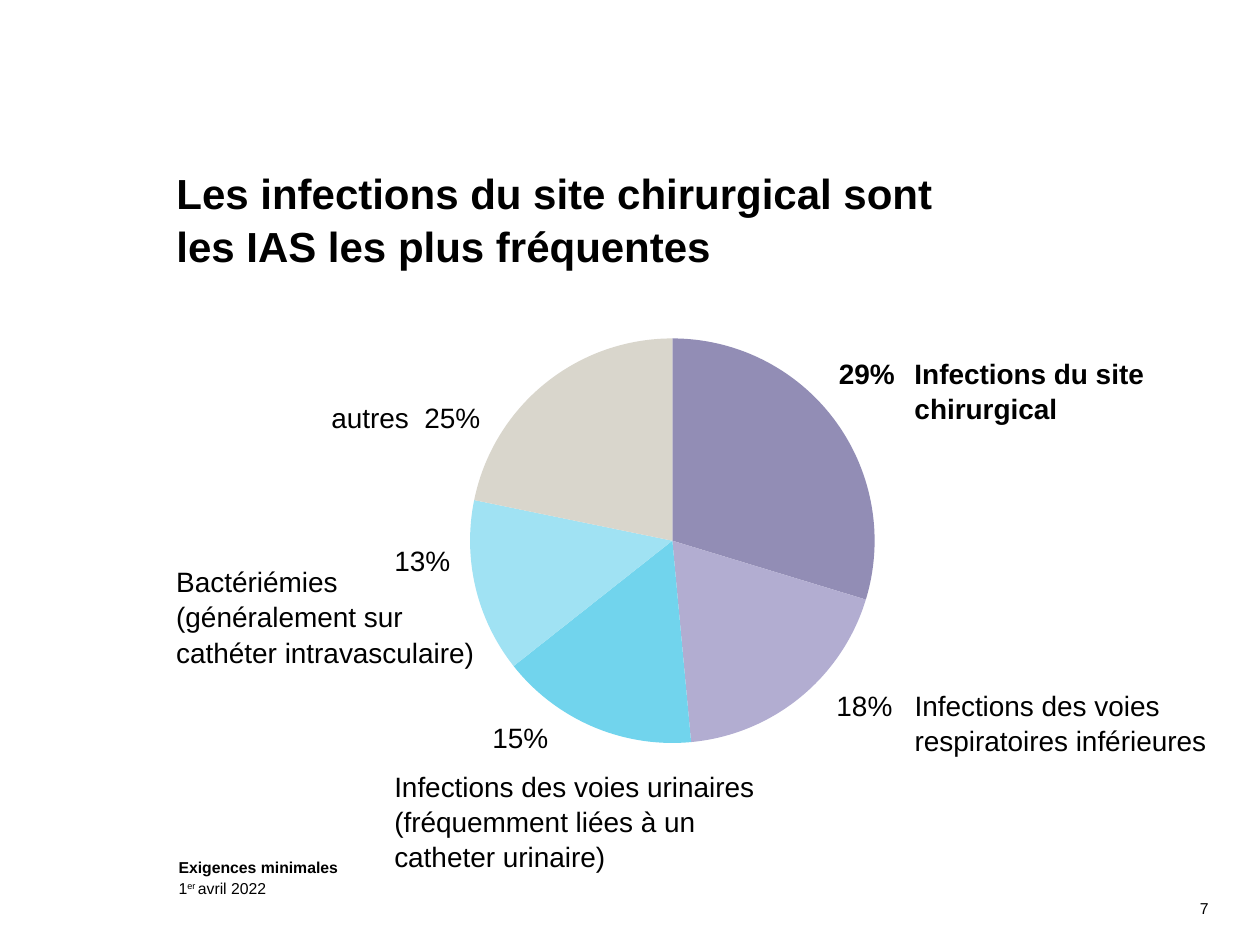
from lxml import etree
from pptx import Presentation
from pptx import util as u
from pptx.chart import data as chart_data
from pptx.dml import color
from pptx.enum import chart as chart_types, text
from pptx.oxml import ns

Pt = u.Pt
FONT = "Arial"
COLORS = {
    "text": "000000",
    "surgical": "58508E",
    "respiratory": "B2ADD1",
    "urinary": "71D4ED",
    "blood": "A0E2F3",
    "other": "D9D6CC",
}
SLICES = [("surgical", 30), ("respiratory", 19), ("urinary", 16), ("blood", 14), ("other", 22)]
OTHER_OPACITY = 65
LABEL_LINE = 19.4
LABELS = [
    ("Infections du site chirurgical", 287.5, 16, 185, 2, True),
    ("Infections des voies respiratoires inférieures", 287.5, 206, 207.4, 2, False),
    ("Infections des voies urinaires \v(fréquemment liées à un catheter urinaire)", -9.8, 252, 238.3, 3, False),
    ("Bactériémies\v(généralement sur cathéter intravasculaire)", -134.4, 135.2, 202.3, 3, False),
    ("29%", 244.3, 16, 60, 1, True),
    ("18%", 242.9, 206, 60, 1, False),
    ("15%", 46.3, 224.5, 60, 1, False),
    ("13%", -9.8, 123, 60, 1, False),
    ("autres", -45.8, 41.6, 75.6, 1, False),
    ("25%", 7.4, 41.6, 60, 1, False),
]


def format_font(font, size, bold=False):
    font.name = FONT
    font.size = Pt(size)
    font.bold = bold
    font.color.rgb = color.RGBColor.from_string(COLORS["text"])


def format_paragraph(paragraph, size, bold, spacing, alignment=text.PP_ALIGN.LEFT):
    paragraph.alignment = alignment
    paragraph.line_spacing = spacing
    for run in paragraph.runs:
        format_font(run.font, size, bold)


def add_text_box(slide, left, top, width, height):
    shape = slide.shapes.add_textbox(Pt(left), Pt(top), Pt(width), Pt(height))
    shape.text_frame.word_wrap = True
    return shape.text_frame


def place_title(slide, left, top, width, height):
    title = slide.shapes.title
    title.left, title.top, title.width, title.height = Pt(left), Pt(top), Pt(width), Pt(height)
    frame = title.text_frame
    frame.text = "Les infections du site chirurgical sont \vles IAS les plus fréquentes"
    frame.word_wrap = True
    frame.auto_size = text.MSO_AUTO_SIZE.NONE
    frame.vertical_anchor = text.MSO_ANCHOR.TOP
    format_paragraph(frame.paragraphs[0], 24, True, 1.05)


def set_plot_layout(chart, left, top, width, height):
    plot_area = chart._chartSpace.chart.plotArea
    for old_layout in plot_area.findall(ns.qn("c:layout")):
        plot_area.remove(old_layout)
    layout = etree.Element(ns.qn("c:layout"))
    manual = etree.SubElement(layout, ns.qn("c:manualLayout"))
    settings = [("layoutTarget", "inner"), ("xMode", "edge"), ("yMode", "edge"),
                ("x", left), ("y", top), ("w", width), ("h", height)]
    for name, value in settings:
        etree.SubElement(manual, ns.qn(f"c:{name}")).set("val", str(value))
    plot_area.insert(0, layout)


def add_pie(slide, left, top, width, height):
    data = chart_data.CategoryChartData()
    data.categories = [str(number) for number in range(1, len(SLICES) + 1)]
    data.add_series("Series 1", [value for _, value in SLICES])
    chart = slide.shapes.add_chart(
        chart_types.XL_CHART_TYPE.PIE, Pt(left), Pt(top), Pt(width), Pt(height), data).chart
    chart.has_legend = False
    chart.has_title = False
    format_font(chart.font, 10)
    plot = chart.plots[0]
    plot.vary_by_categories = True
    for index, (name, _) in enumerate(SLICES):
        point = plot.series[0].points[index]
        point.format.fill.solid()
        point.format.fill.fore_color.rgb = color.RGBColor.from_string(COLORS[name])
        point.format.line.fill.background()
        if name == "other":
            fill_color = point._element.find(".//" + ns.qn("a:srgbClr")) if hasattr(point, "_element") else None
            if fill_color is None:
                fill_color = chart._chartSpace.xpath(f'.//a:srgbClr[@val="{COLORS[name]}"]')[0]
            etree.SubElement(fill_color, ns.qn("a:alpha")).set("val", str(OTHER_OPACITY * 1000))
    set_plot_layout(chart, 0.13, 0.04, 0.74, 0.92)


def add_labels(slide, left, top):
    for label, offset_x, offset_y, width, lines, bold in LABELS:
        frame = add_text_box(slide, left + offset_x, top + offset_y, width, lines * LABEL_LINE + 7.2)
        frame.text = label
        format_paragraph(frame.paragraphs[0], 16, bold, 1.05)


def add_footer(slide, left, top, width, height):
    frame = add_text_box(slide, left, top, width, height)
    frame.text = "Exigences minimales"
    format_paragraph(frame.paragraphs[0], 9, True, Pt(12))
    date = frame.add_paragraph()
    for part in ("1", "er ", "avril 2022"):
        date.add_run().text = part
    format_paragraph(date, 9, False, Pt(12))
    date.runs[1].font._element.set("baseline", "30000")


def add_slide_number(slide, left, top, width, height):
    frame = add_text_box(slide, left, top, width, height)
    frame.text = "7"
    format_paragraph(frame.paragraphs[0], 9, False, Pt(12), text.PP_ALIGN.RIGHT)


def main():
    presentation = Presentation()
    presentation.slide_width, presentation.slide_height = Pt(720), Pt(540)
    slide = presentation.slides.add_slide(presentation.slide_layouts[5])
    add_footer(slide, 95, 485.3, 417.6, 31.7)
    add_pie(slide, 228, 183, 312.5, 252)
    place_title(slide, 93.6, 90.7, 598.3, 36)
    add_slide_number(slide, 530, 509, 167.7, 37.4)
    add_labels(slide, 228, 183)
    presentation.save("out.pptx")


if __name__ == "__main__":
    main()
